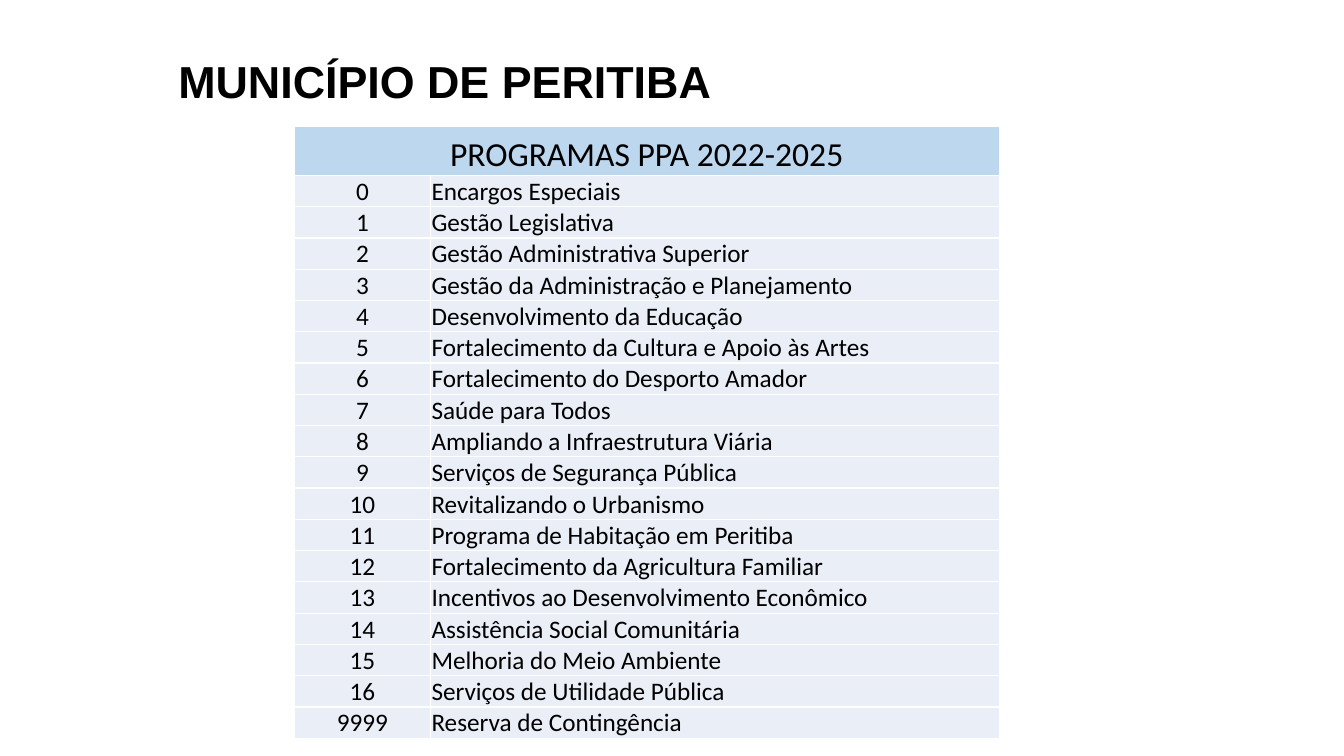
from lxml.etree import SubElement
from pptx import Presentation
from pptx.dml.color import RGBColor
from pptx.enum.text import MSO_ANCHOR, MSO_AUTO_SIZE, PP_ALIGN
from pptx.oxml.ns import qn
from pptx.util import Inches, Pt

COLORS = {"text": "000000", "header": "BDD7EE", "row": "EAEFF7", "border": "FFFFFF"}
TITLE_BOX = (1.67, 0.48, 8.03, 0.64)
TABLE_BOX = (2.92, 1.25, 6.99, 6.08)
CODE_WIDTH = 1.35
HEADER_HEIGHT = 0.49
PROGRAMS = [
    ("0", "Encargos Especiais"),
    ("1", "Gestão Legislativa"),
    ("2", "Gestão Administrativa Superior"),
    ("3", "Gestão da Administração e Planejamento"),
    ("4", "Desenvolvimento da Educação"),
    ("5", "Fortalecimento da Cultura e Apoio às Artes"),
    ("6", "Fortalecimento do Desporto Amador"),
    ("7", "Saúde para Todos"),
    ("8", "Ampliando a Infraestrutura Viária"),
    ("9", "Serviços de Segurança Pública"),
    ("10", "Revitalizando o Urbanismo"),
    ("11", "Programa de Habitação em Peritiba"),
    ("12", "Fortalecimento da Agricultura Familiar"),
    ("13", "Incentivos ao Desenvolvimento Econômico"),
    ("14", "Assistência Social Comunitária"),
    ("15", "Melhoria do Meio Ambiente"),
    ("16", "Serviços de Utilidade Pública"),
    ("9999", "Reserva de Contingência"),
]


def write(paragraph, text, font, size, align=PP_ALIGN.LEFT, bold=False):
    """Put styled text into a paragraph."""
    paragraph.text = text
    paragraph.alignment = align
    paragraph.font.name = font
    paragraph.font.size = Pt(size)
    paragraph.font.bold = bold
    paragraph.font.color.rgb = RGBColor.from_string(COLORS["text"])


def add_title(page, box, text):
    """Add the bold page title."""
    frame = page.shapes.add_textbox(*map(Inches, box)).text_frame
    frame.word_wrap = True
    frame.auto_size = MSO_AUTO_SIZE.SHAPE_TO_FIT_TEXT
    write(frame.paragraphs[0], text, "Arial", 32, bold=True)


def style_cell(cell, fill):
    """Give a cell its borders, fill, tight margins and bottom anchor."""
    properties = cell._tc.get_or_add_tcPr()
    for side in ("a:lnL", "a:lnR", "a:lnT", "a:lnB"):
        line = SubElement(properties, qn(side), w=str(Pt(1)))
        solid = SubElement(line, qn("a:solidFill"))
        SubElement(solid, qn("a:srgbClr"), val=COLORS["border"])
    cell.fill.solid()
    cell.fill.fore_color.rgb = RGBColor.from_string(COLORS[fill])
    cell.margin_left = cell.margin_right = cell.margin_top = Inches(0.01)
    cell.margin_bottom = 0
    cell.vertical_anchor = MSO_ANCHOR.BOTTOM


def add_programs(page, box, heading, programs):
    """Add the program table under a merged heading row."""
    width, height = box[2:]
    table = page.shapes.add_table(len(programs) + 1, 2, *map(Inches, box)).table
    table.first_row = table.horz_banding = False
    table.columns[0].width = Inches(CODE_WIDTH)
    table.columns[1].width = Inches(width - CODE_WIDTH)
    for row in table.rows:
        row.height = Inches((height - HEADER_HEIGHT) / len(programs))
    table.rows[0].height = Inches(HEADER_HEIGHT)

    header = table.cell(0, 0)
    header.merge(table.cell(0, 1))
    for column in range(2):
        style_cell(table.cell(0, column), "header")
    write(header.text_frame.paragraphs[0], heading, "Calibri", 24, PP_ALIGN.CENTER)

    for number, program in enumerate(programs, 1):
        for column, align in enumerate((PP_ALIGN.CENTER, PP_ALIGN.LEFT)):
            cell = table.cell(number, column)
            style_cell(cell, "row")
            write(cell.text_frame.paragraphs[0], program[column], "Calibri", 18, align)


def main():
    """Build and save the deck."""
    deck = Presentation()
    deck.slide_width, deck.slide_height = Inches(13.33), Inches(7.5)
    page = deck.slides.add_slide(deck.slide_layouts[6])
    add_title(page, TITLE_BOX, "MUNICÍPIO DE PERITIBA")
    add_programs(page, TABLE_BOX, "PROGRAMAS PPA 2022-2025", PROGRAMS)
    deck.save("out.pptx")


if __name__ == "__main__":
    main()
